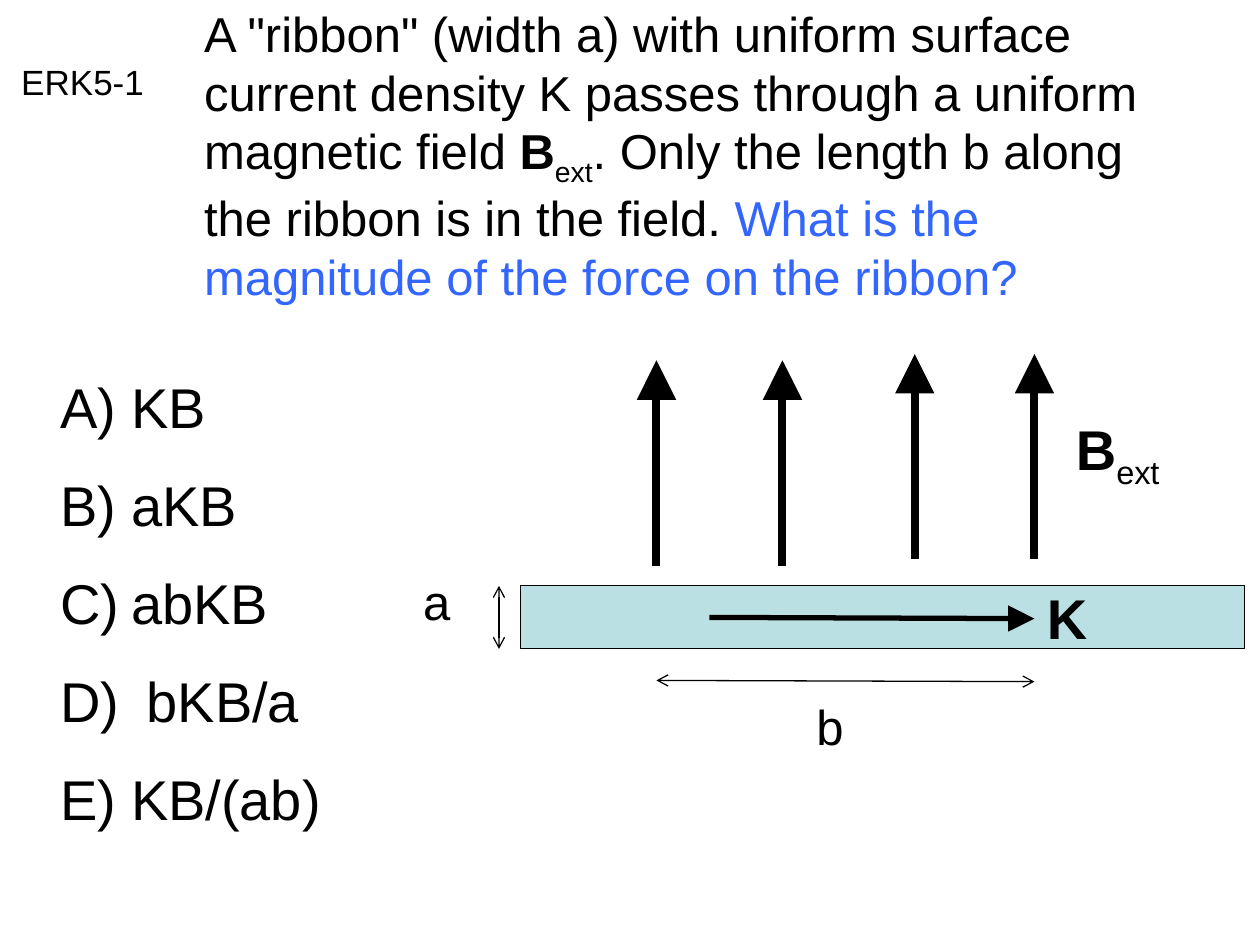
from lxml.etree import SubElement
from pptx import Presentation
from pptx.dml.color import RGBColor
from pptx.enum.shapes import MSO_CONNECTOR, MSO_SHAPE
from pptx.enum.text import MSO_ANCHOR, MSO_AUTO_SIZE, PP_ALIGN
from pptx.oxml.ns import qn
from pptx.util import Inches, Pt

BLACK = RGBColor(0x00, 0x00, 0x00)
BLUE = RGBColor(0x33, 0x66, 0xFF)
RIBBON = RGBColor(0xBB, 0xE0, 0xE3)
FONT = "Arial"
SUBSCRIPT = "-25000"


def place(sp, left, top, width, height):
    sp.left, sp.top = Inches(left), Inches(top)
    sp.width, sp.height = Inches(width), Inches(height)


def add_run(p, text, size, color=BLACK, bold=False, subscript=False):
    r = p.add_run()
    r.text = text
    r.font.name, r.font.size = FONT, Pt(size)
    r.font.bold = bold
    r.font.color.rgb = color
    if subscript:
        r.font._element.set("baseline", SUBSCRIPT)


def fill_title(sp):
    place(sp, 1.52, 0.42, 8.05, 2.08)
    tf = sp.text_frame
    tf.word_wrap, tf.auto_size = True, MSO_AUTO_SIZE.NONE
    tf.vertical_anchor = MSO_ANCHOR.MIDDLE
    tf.margin_bottom = Inches(0.52)
    p = tf.paragraphs[0]
    p.alignment = PP_ALIGN.LEFT
    add_run(p, 'A "ribbon" (width a) with uniform surface current density K '
               'passes through a uniform magnetic field ', 28)
    add_run(p, "B", 28, bold=True)
    add_run(p, "ext", 28, subscript=True)
    add_run(p, ". Only the length b along the ribbon is in the field. ", 28)
    add_run(p, "What is the magnitude of the force on the ribbon?", 28, BLUE)


def fill_answers(sp, answers):
    place(sp, 0.38, 2.91, 6.94, 3.87)
    tf = sp.text_frame
    tf.auto_size = MSO_AUTO_SIZE.NONE
    for i, answer in enumerate(answers):
        p = tf.add_paragraph() if i else tf.paragraphs[0]
        p.space_before = Pt(17.5)
        pPr = p._p.get_or_add_pPr()
        pPr.set("marL", str(Inches(0.56)))
        pPr.set("indent", str(-Inches(0.56)))
        SubElement(pPr, qn("a:buFont"), typeface=FONT)
        SubElement(pPr, qn("a:buAutoNum"), type="alphaUcParenR")
        add_run(p, answer, 32)


def add_label(shapes, text, left, top, width, height, size,
              bold=False, subscript="", wrap=False):
    box = shapes.add_textbox(Inches(left), Inches(top),
                             Inches(width), Inches(height))
    tf = box.text_frame
    tf.word_wrap = wrap
    p = tf.paragraphs[0]
    add_run(p, text, size, bold=bold)
    if subscript:
        add_run(p, subscript, size, subscript=True)


def add_arrow(shapes, start, end, weight, kind="triangle", size="lg", double=False):
    line = shapes.add_connector(MSO_CONNECTOR.STRAIGHT,
                                *(Inches(v) for v in (*start, *end)))
    line.line.color.rgb = BLACK
    line.line.width = Pt(weight)
    ln = line.line._get_or_add_ln()
    for tag in ("a:headEnd", "a:tailEnd") if double else ("a:tailEnd",):
        SubElement(ln, qn(tag), type=kind, w=size, len=size)
    SubElement(line._element.spPr, qn("a:effectLst"))


def add_dimension(shapes, start, end):
    add_arrow(shapes, start, end, 0.75, "arrow", "med", double=True)


def add_ribbon(shapes):
    sp = shapes.add_shape(MSO_SHAPE.RECTANGLE, Inches(4.13), Inches(4.65),
                          Inches(5.75), Inches(0.5))
    sp.shadow.inherit = False
    sp.fill.solid()
    sp.fill.fore_color.rgb = RIBBON
    sp.line.color.rgb = BLACK
    sp.line.width = Pt(0.75)


def add_diagram(shapes):
    for x, bottom in ((5.21, 4.49), (6.21, 4.49), (7.26, 4.44), (8.21, 4.44)):
        add_arrow(shapes, (x, bottom), (x, bottom - 1.63), 4.5)
    add_ribbon(shapes)
    add_dimension(shapes, (3.96, 4.65), (3.96, 5.15))
    add_dimension(shapes, (5.21, 5.4), (8.21, 5.41))
    add_arrow(shapes, (5.63, 4.9), (8.21, 4.91), 3)
    add_label(shapes, "a", 3.26, 4.49, 0.42, 0.57, 28, wrap=True)
    add_label(shapes, "b", 6.38, 5.48, 0.42, 0.57, 28)
    add_label(shapes, "B", 8.44, 3.24, 0.96, 0.64, 32, bold=True, subscript="ext")
    add_label(shapes, "K", 8.21, 4.58, 0.53, 0.64, 32, bold=True, wrap=True)


def main():
    prs = Presentation()
    prs.slide_width, prs.slide_height = Inches(10), Inches(7.5)
    s = prs.slides.add_slide(prs.slide_layouts[1])
    fill_title(s.shapes.title)
    fill_answers(s.placeholders[1], ["KB", "aKB", "abKB", " bKB/a", "KB/(ab)"])
    add_label(s.shapes, "ERK5-1", 0.07, 0.43, 1.18, 0.44, 20)
    add_diagram(s.shapes.add_group_shape().shapes)
    prs.save("out.pptx")


if __name__ == "__main__":
    main()
